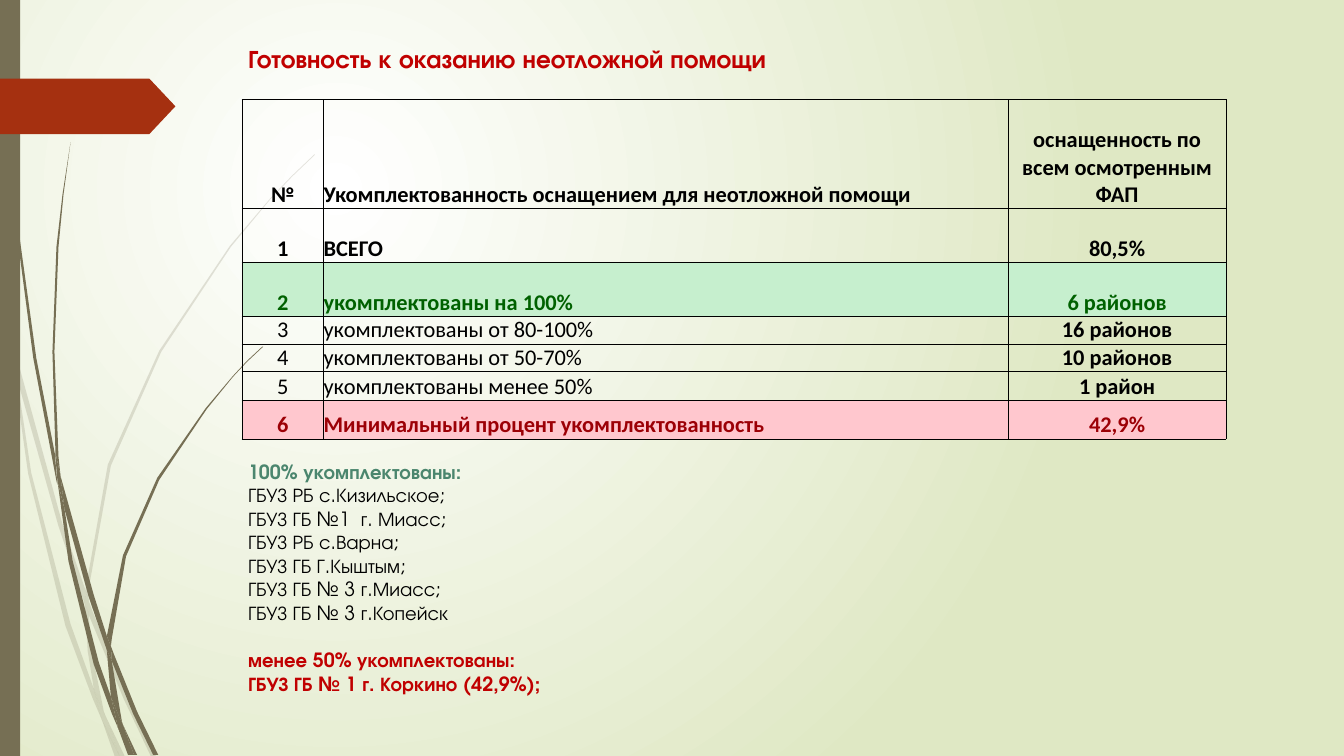
from lxml import etree
from pptx import Presentation
from pptx.dml import color
from pptx.enum import shapes, text
from pptx.oxml import ns
from pptx import util as u

COLUMNS, ROWS = 1333, 750
CELL = u.Inches(0.01)
HEADING_FONT, TABLE_FONT = "TeX Gyre Adventor", "Calibri"
COLORS = {
    "white": "FFFFFF", "pale": "DFE8C4", "stem": "766F54", "arrow": "A53010",
    "red": "C00000", "teal": "4B866E", "black": "000000",
    "good": "006100", "good fill": "C6EFCE", "bad": "9C0006", "bad fill": "FFC7CE",
}
PALE_BLADES = [
    [(11, 350), (9, 322), (0, 282), (0, 299), (10, 344)],
    [(58, 522), (84, 599), (85, 586), (62, 520), (14, 345), (17, 376)],
    [(92, 607), (88, 596), (88, 610), (123, 694), (150, 751), (155, 751), (127, 692)],
    [(119, 751), (124, 751), (105, 711)],
    [(93, 683), (70, 619), (31, 469), (17, 376), (11, 350), (28, 470), (65, 621),
     (92, 693), (101, 714), (99, 707)],
    [(84, 599), (87, 646), (93, 683), (96, 692), (105, 711), (103, 706), (91, 646),
     (88, 610), (88, 608)],
    [(88, 584), (110, 462), (160, 349), (229, 245), (268, 198), (290, 175), (312, 154),
     (312, 153), (289, 175), (268, 197), (228, 244), (158, 348), (107, 461), (85, 584),
     (85, 586), (88, 596)],
    [(101, 714), (114, 751), (119, 751)],
    [(88, 608), (88, 610), (88, 596), (85, 586), (84, 599)],
    [(96, 692), (93, 683), (99, 707), (101, 714), (119, 751), (105, 711)],
]
DARK_BLADES = [
    [(7, 110), (17, 233), (33, 355), (56, 477), (57, 481), (55, 457), (55, 453),
     (36, 355), (19, 232), (8, 109), (5, 48), (4, 0), (3, 0), (4, 48)],
    [(88, 592), (106, 645), (106, 633), (106, 631), (93, 590), (60, 472), (64, 505)],
    [(113, 649), (110, 641), (111, 656), (132, 708), (152, 749), (157, 749), (136, 706)],
    [(110, 691), (98, 657), (72, 556), (64, 505), (57, 477), (68, 557), (93, 659),
     (111, 708), (117, 722), (116, 717)],
    [(60, 472), (58, 453), (54, 349), (58, 245), (63, 193), (70, 141), (62, 193),
     (56, 245), (52, 349), (55, 449)],
    [(133, 749), (136, 749), (122, 719)],
    [(57, 477), (64, 505), (60, 472), (55, 449), (55, 453)],
    [(111, 633), (125, 552), (158, 476), (205, 406), (231, 374), (245, 359), (261, 344),
     (260, 344), (245, 358), (231, 373), (204, 405), (156, 474), (122, 551), (106, 631),
     (110, 641)],
    [(117, 722), (127, 749), (131, 749)],
    [(106, 645), (110, 691), (116, 706), (122, 719), (121, 716), (111, 656), (109, 651)],
    [(106, 645), (109, 651), (111, 656), (110, 641), (106, 631), (106, 633)],
    [(116, 706), (110, 691), (116, 717), (117, 722), (130, 749), (133, 749), (122, 719)],
]
TABLE_COLUMNS = [81, 679, 216]
TABLE_ROWS = [
    (108, ["№", "Укомплектованность оснащением для неотложной помощи",
           "оснащенность по всем осмотренным ФАП"], "black", None, True),
    (53, ["1", "ВСЕГО", "80,5%"], "black", None, True),
    (54, ["2", "укомплектованы на 100%", "6 районов"], "good", "good fill", True),
    (27, ["3", "укомплектованы от 80-100%", "16 районов"], "black", None, False),
    (27, ["4", "укомплектованы от 50-70%", "10 районов"], "black", None, False),
    (29, ["5", "укомплектованы менее 50%", "1 район"], "black", None, False),
    (38, ["6", "Минимальный процент укомплектованность", "42,9%"], "bad", "bad fill", True),
]
DISTRICTS = [
    ("100% укомплектованы:", "teal", True, 0),
    ("ГБУЗ РБ с.Кизильское;", "black", False, 0),
    ("ГБУЗ ГБ №1  г. Миасс;", "black", False, 0),
    ("ГБУЗ РБ с.Варна;", "black", False, 0),
    ("ГБУЗ ГБ Г.Кыштым;", "black", False, 0),
    ("ГБУЗ ГБ № 3 г.Миасс;", "black", False, 0),
    ("ГБУЗ ГБ № 3 г.Копейск", "black", False, 0),
    ("менее 50% укомплектованы:", "red", True, 17),
    ("ГБУЗ ГБ № 1 г. Коркино (42,9%);", "red", True, 0),
]


def rgb(name):
    return color.RGBColor.from_string(COLORS[name])


def apply(item, values):
    for name, value in values.items():
        setattr(item, name, value)


def place(box, left, top, width, height):
    apply(box, {"left": left * CELL, "top": top * CELL,
                "width": width * CELL, "height": height * CELL})


def write(para, words, font, size, ink, bold=False, align=text.PP_ALIGN.LEFT, before=0):
    apply(para, {"alignment": align, "space_before": u.Pt(before), "line_spacing": 1.0})
    span = para.add_run()
    span.text = words
    apply(span.font, {"name": font, "size": u.Pt(size), "bold": bold})
    span.font.color.rgb = rgb(ink)


def paint(shape, ink, opacity=100):
    shape.shadow.inherit = False
    shape.fill.solid()
    shape.fill.fore_color.rgb = rgb(ink)
    shape.line.fill.background()
    if opacity < 100:
        tint = shape._element.spPr.find(".//" + ns.qn("a:srgbClr"))
        etree.SubElement(tint, ns.qn("a:alpha"), val=str(opacity * 1000))


def add_blade(page, outline, opacity):
    builder = page.shapes.build_freeform(*outline[0], scale=CELL)
    builder.add_line_segments(outline[1:], close=True)
    paint(builder.convert_to_shape(), "stem", opacity)


def add_block(page, kind, spot, ink):
    block = page.shapes.add_shape(kind, *(value * CELL for value in spot))
    paint(block, ink)
    return block


def fill_background(page):
    fill = page.background.fill
    fill.gradient()
    for stop, ink, position in zip(fill.gradient_stops, ("white", "pale"), (0, 1)):
        stop.position = position
        stop.color.rgb = rgb(ink)
    gradient = page._element.find(".//" + ns.qn("a:gradFill"))
    gradient.remove(gradient.find(ns.qn("a:lin")))
    circle = etree.SubElement(gradient, ns.qn("a:path"), path="circle")
    etree.SubElement(circle, ns.qn("a:fillToRect"), l="50000", t="50000", r="100000", b="100000")


def add_borders(cell):
    properties = cell._tc.get_or_add_tcPr()
    for index, side in enumerate(("lnL", "lnR", "lnT", "lnB")):
        line = etree.Element(ns.qn("a:" + side), w=str(u.Pt(0.5)))
        solid = etree.SubElement(line, ns.qn("a:solidFill"))
        etree.SubElement(solid, ns.qn("a:srgbClr"), val=COLORS["black"])
        properties.insert(index, line)


def add_readiness_table(page, left, top):
    heights = [row[0] for row in TABLE_ROWS]
    frame = page.shapes.add_table(
        len(heights), len(TABLE_COLUMNS), left * CELL, top * CELL,
        sum(TABLE_COLUMNS) * CELL, sum(heights) * CELL)
    table = frame.table
    apply(table, {"first_row": False, "horz_banding": False})
    for column, width in zip(table.columns, TABLE_COLUMNS):
        column.width = width * CELL
    for row, (height, words, ink, shade, bold) in zip(table.rows, TABLE_ROWS):
        row.height = height * CELL
        for index, (cell, entry) in enumerate(zip(row.cells, words)):
            apply(cell, {"margin_left": 0, "margin_right": 0, "margin_top": 0,
                         "margin_bottom": 0, "vertical_anchor": text.MSO_ANCHOR.BOTTOM})
            align = text.PP_ALIGN.LEFT if index == 1 else text.PP_ALIGN.CENTER
            write(cell.text_frame.paragraphs[0], entry, TABLE_FONT, 16, ink,
                  bold or index == 2, align)
            if shade:
                cell.fill.solid()
                cell.fill.fore_color.rgb = rgb(shade)
            else:
                cell.fill.background()
            add_borders(cell)


def fill_placeholder(box, spot, lines, size, anchor):
    place(box, *spot)
    frame = box.text_frame
    apply(frame, {"word_wrap": True, "auto_size": text.MSO_AUTO_SIZE.NONE,
                  "vertical_anchor": anchor})
    for index, (words, ink, bold, before) in enumerate(lines):
        para = frame.add_paragraph() if index else frame.paragraphs[0]
        write(para, words, HEADING_FONT, size, ink, bold, before=before)
        properties = para._p.get_or_add_pPr()
        for name in ("marL", "indent"):
            properties.set(name, "0")
        etree.SubElement(properties, ns.qn("a:buNone"))


def main():
    deck = Presentation()
    apply(deck, {"slide_width": COLUMNS * CELL, "slide_height": ROWS * CELL})
    page = deck.slides.add_slide(deck.slide_layouts[1])
    fill_background(page)
    for blades, opacity in ((PALE_BLADES, 20), (DARK_BLADES, 100)):
        for outline in blades:
            add_blade(page, outline, opacity)
    kinds = shapes.MSO_SHAPE
    add_block(page, kinds.RECTANGLE, (0, 0, 20, ROWS), "stem")
    arrow = add_block(page, kinds.PENTAGON, (0, 78, 174, 55), "arrow")
    arrow.adjustments[0] = 0.47
    title = [("Готовность к оказанию неотложной помощи", "red", True, 0)]
    fill_placeholder(page.shapes.title, (236, 37, 1022, 41), title, 18, text.MSO_ANCHOR.MIDDLE)
    add_readiness_table(page, 240, 99)
    fill_placeholder(page.placeholders[1], (236, 451, 980, 246), DISTRICTS, 14,
                     text.MSO_ANCHOR.TOP)
    deck.save("out.pptx")


if __name__ == "__main__":
    main()
